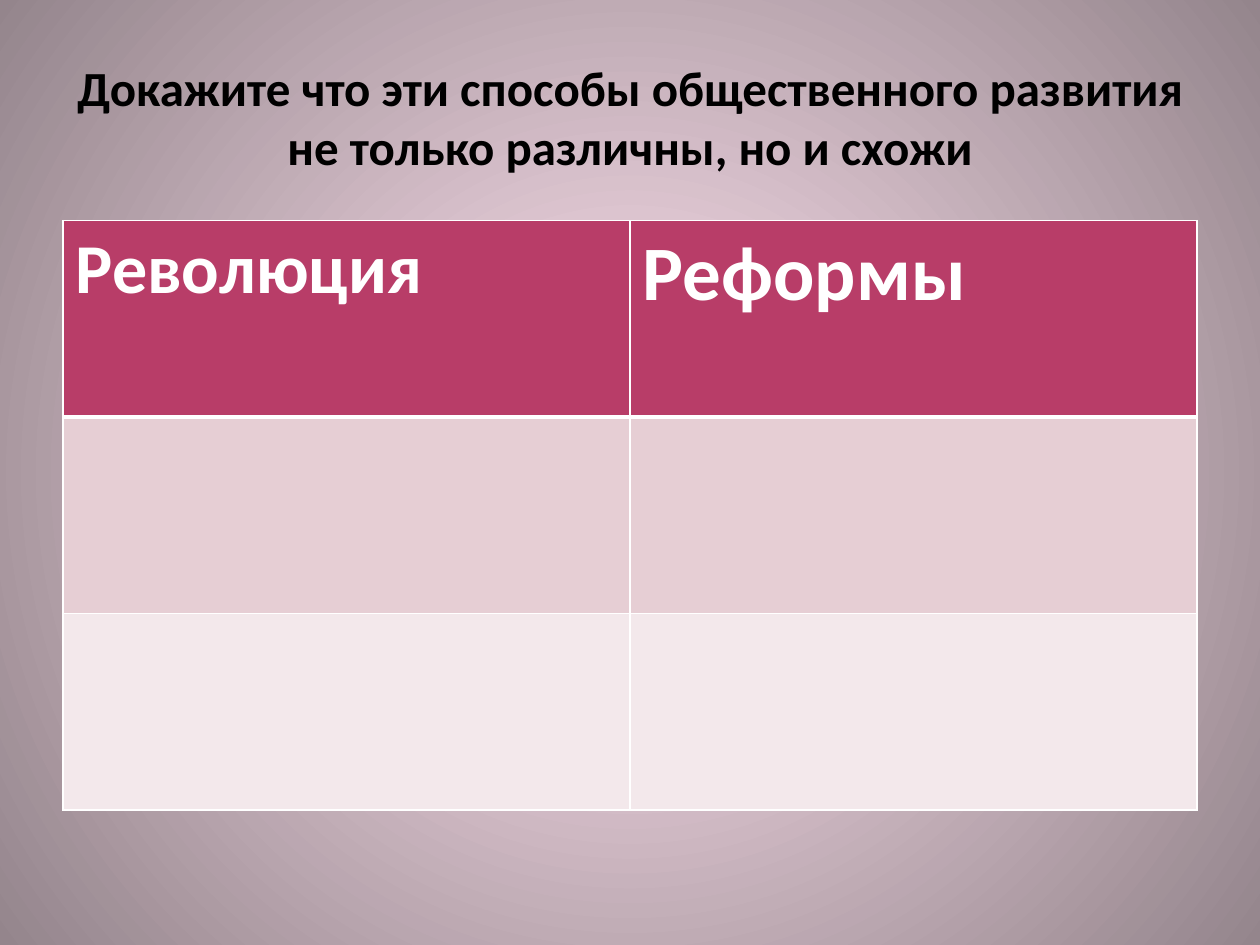
from pptx import Presentation
from pptx import util as u
from pptx.dml.color import RGBColor
from pptx.enum import text
from pptx.oxml import parse_xml
from pptx.oxml.ns import nsdecls, qn

FONT = "Calibri"
WHITE = "FFFFFF"
HEADS = [("Революция", 40), ("Реформы", 44)]
FILLS = ["B83D68", "E6CED4", "F3E8EB"]


def rgb(code):
    return RGBColor.from_string(code)


def paint_back(slide, inner, outer):
    """Fill the background with a gradient spreading from the centre."""
    fill = slide.background.fill
    fill.gradient()
    for stop, code, place in zip(fill.gradient_stops, (inner, outer), (0, 1)):
        stop.color.rgb = rgb(code)
        stop.position = place
    line = slide.element.find(".//" + qn("a:lin"))
    line.getparent().replace(line, parse_xml(
        f'<a:path {nsdecls("a")} path="circle">'
        '<a:fillToRect l="50000" t="50000" r="50000" b="50000"/></a:path>'))


def write(frame, words, size, color):
    para = frame.paragraphs[0]
    para.text = words
    font = para.font
    font.name, font.size, font.bold = FONT, u.Pt(size), True
    font.color.rgb = rgb(color)
    return para


def add_title(slide, words):
    box = slide.shapes.add_textbox(
        u.Inches(0.5), u.Inches(0.3), u.Inches(9), u.Inches(1.25))
    frame = box.text_frame
    frame.word_wrap = True
    frame.vertical_anchor = text.MSO_ANCHOR.MIDDLE
    write(frame, words, 28, "000000").alignment = text.PP_ALIGN.CENTER


def set_edges(cell, color, **widths):
    """Draw cell borders; widths are points by side (L, R, T, B)."""
    props = cell._tc.get_or_add_tcPr()
    for spot, (side, width) in enumerate(widths.items()):
        props.insert(spot, parse_xml(
            f'<a:ln{side} {nsdecls("a")} w="{u.Pt(width)}"><a:solidFill>'
            f'<a:srgbClr val="{color}"/></a:solidFill></a:ln{side}>'))


def add_grid(slide):
    grid = slide.shapes.add_table(
        len(FILLS), len(HEADS), u.Inches(0.5), u.Inches(1.75),
        u.Inches(9), u.Inches(4.68)).table
    for row, code in enumerate(FILLS):
        for col in range(len(HEADS)):
            cell = grid.cell(row, col)
            cell.fill.solid()
            cell.fill.fore_color.rgb = rgb(code)
            set_edges(cell, WHITE, L=1, R=1, T=3 if row == 1 else 1,
                      B=3 if row == 0 else 1)
    for col, (words, size) in enumerate(HEADS):
        write(grid.cell(0, col).text_frame, words, size, WHITE)


def main():
    deck = Presentation()
    deck.slide_width, deck.slide_height = u.Inches(10), u.Inches(7.5)
    slide = deck.slides.add_slide(deck.slide_layouts[6])
    paint_back(slide, "FFE3F0", "94858C")
    add_title(slide, "Докажите что эти способы общественного развития "
                     "не только различны, но и схожи")
    add_grid(slide)
    deck.save("out.pptx")


if __name__ == "__main__":
    main()
